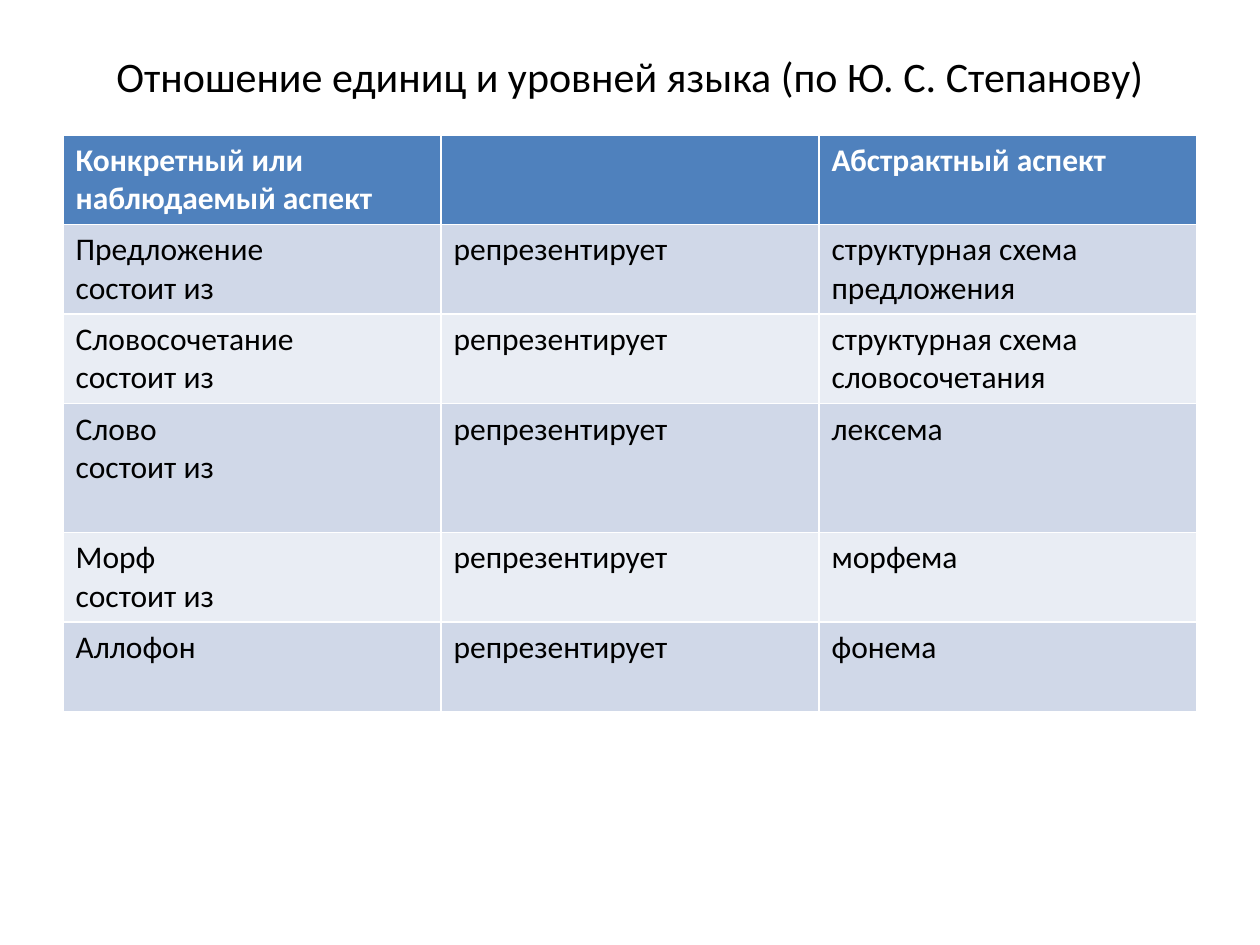
from pptx import Presentation
from pptx.dml.color import RGBColor as Rgb
from pptx.enum.text import MSO_ANCHOR as Anchor, PP_ALIGN as Align
from pptx.util import Inches, Pt

WIDE, HIGH = 10, 7.5
HEX = {"head": "4F81BD", "odd": "D0D8E8", "even": "E9EDF4",
       "white": "FFFFFF", "black": "000000"}
LINK, PART = "репрезентирует", "\nсостоит из"
ROWS = [
    ("Конкретный или наблюдаемый аспект", "", "Абстрактный аспект"),
    ("Предложение" + PART, LINK, "структурная схема предложения"),
    ("Словосочетание" + PART, LINK, "структурная схема словосочетания"),
    ("Слово" + PART, LINK, "лексема"),
    ("Морф" + PART, LINK, "морфема"),
    ("Аллофон", LINK, "фонема"),
]
TALL = [0.71, 0.71, 0.71, 1.02, 0.71, 0.71]


def share(left, top, width, height):
    """Turn shares of the slide into a box of lengths."""
    return (Inches(WIDE * left), Inches(HIGH * top),
            Inches(WIDE * width), Inches(HIGH * height))


def style(frame, color, **form):
    """Give all the text of a frame one font."""
    for para in frame.paragraphs:
        para.font.color.rgb = Rgb.from_string(HEX[color])
        for name, value in {"name": "Calibri", **form}.items():
            setattr(para.font, name, value)


def add_title(slide, box):
    """Place the centred title in its box."""
    title = slide.shapes.title
    for name, value in zip(("left", "top", "width", "height"), box):
        setattr(title, name, value)
    frame = title.text_frame
    frame.text = "Отношение единиц и уровней языка (по Ю. С. Степанову)"
    frame.vertical_anchor = Anchor.MIDDLE
    frame.paragraphs[0].alignment = Align.CENTER
    style(frame, "black", size=Pt(24))


def add_grid(slide, box):
    """Fill the box with the table of units and levels."""
    table = slide.shapes.add_table(len(ROWS), len(ROWS[0]), *box).table
    for r, texts in enumerate(ROWS):
        table.rows[r].height = int(box[3] * TALL[r] / sum(TALL))
        band = "head" if r == 0 else ("even", "odd")[r % 2]
        for c, text in enumerate(texts):
            cell = table.cell(r, c)
            cell.text = text
            cell.fill.solid()
            cell.fill.fore_color.rgb = Rgb.from_string(HEX[band])
            style(cell.text_frame, "black" if r else "white",
                  size=Pt(18), bold=r == 0)


def main():
    """Build the slide and save it."""
    deck = Presentation()
    deck.slide_width, deck.slide_height = Inches(WIDE), Inches(HIGH)
    slide = deck.slides.add_slide(deck.slide_layouts[5])
    add_title(slide, share(0.05, 0.04, 0.9, 0.08))
    add_grid(slide, share(0.05, 0.143, 0.9, 0.61))
    deck.save("out.pptx")


if __name__ == "__main__":
    main()
